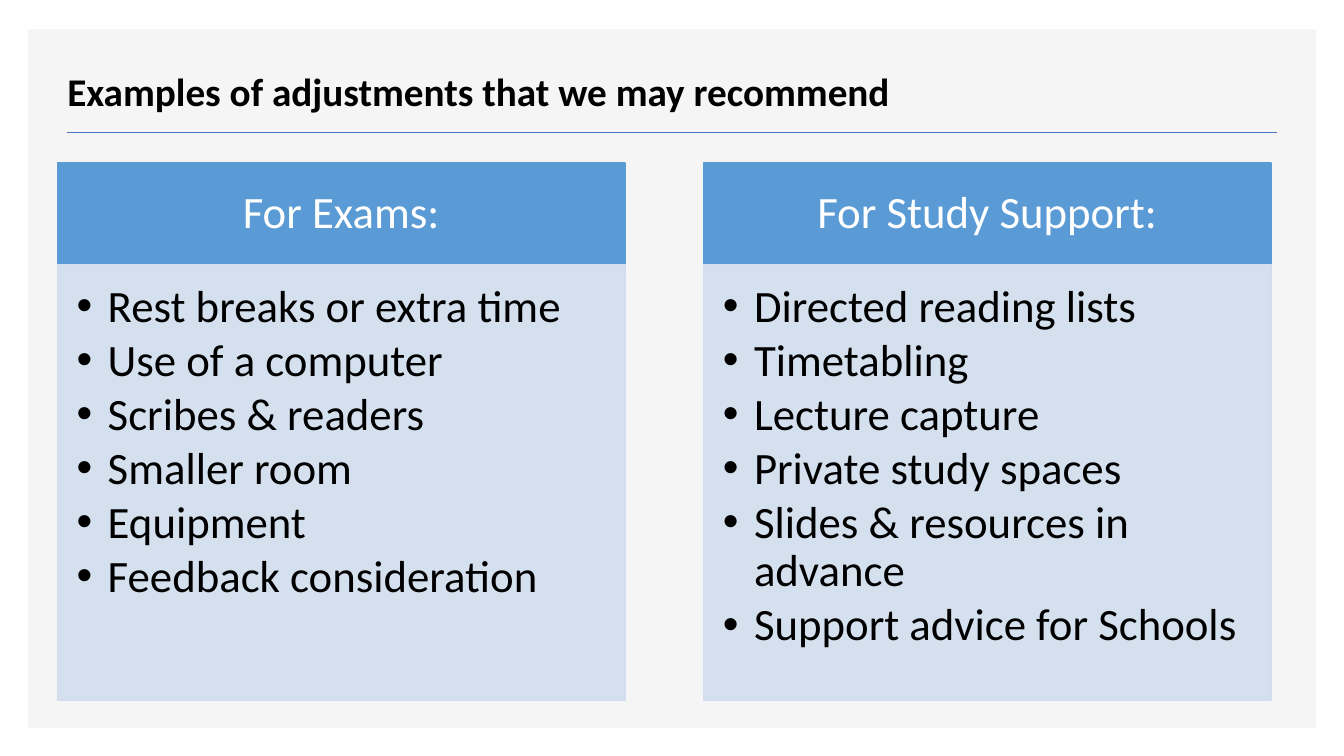
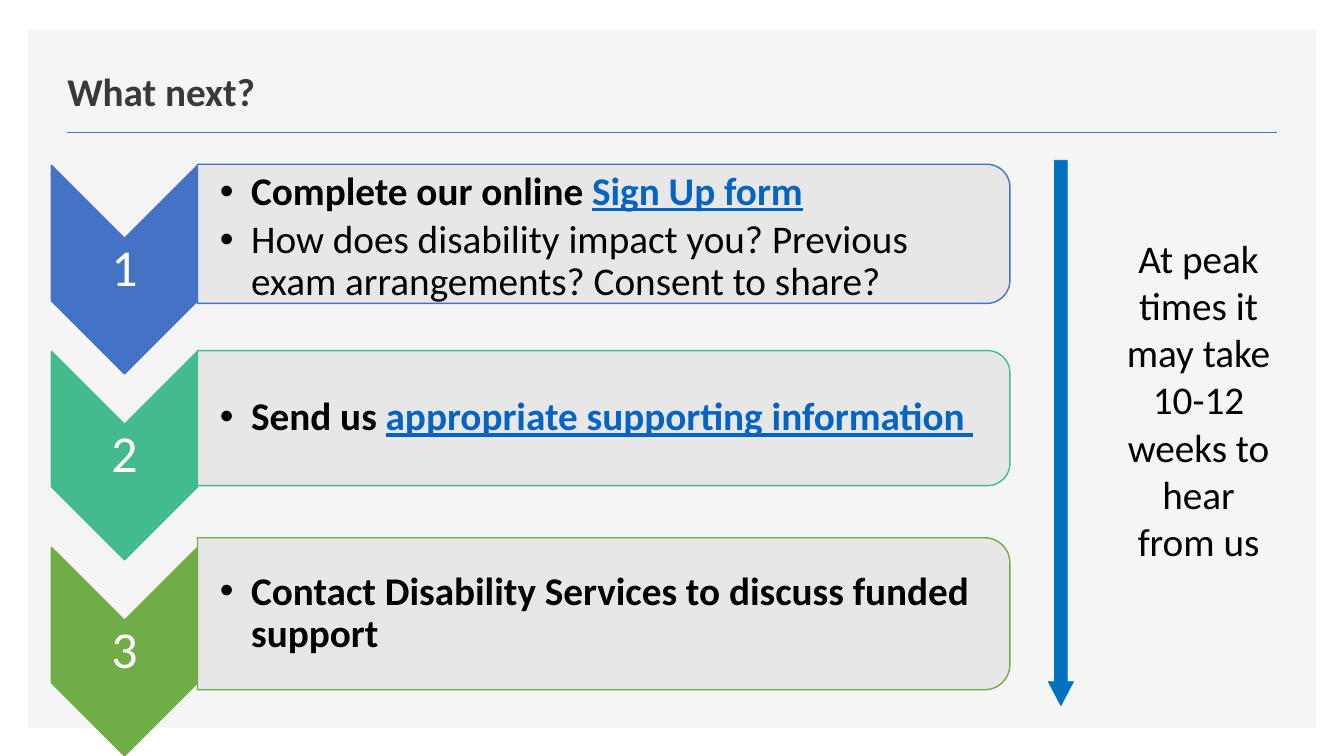
from lxml import etree
from pptx import Presentation
from pptx.dml.color import RGBColor
from pptx.enum.shapes import MSO_CONNECTOR, MSO_SHAPE
from pptx.enum.text import MSO_ANCHOR, PP_ALIGN
from pptx.oxml.ns import qn
from pptx.util import Pt

RECT, CHEVRON = MSO_SHAPE.RECTANGLE, MSO_SHAPE.CHEVRON
ROUND_TOP, DOWN_ARROW = MSO_SHAPE.ROUND_2_SAME_RECTANGLE, MSO_SHAPE.DOWN_ARROW
STRAIGHT = MSO_CONNECTOR.STRAIGHT
TOP, MIDDLE, BOTTOM = MSO_ANCHOR.TOP, MSO_ANCHOR.MIDDLE, MSO_ANCHOR.BOTTOM
LEFT, CENTER = PP_ALIGN.LEFT, PP_ALIGN.CENTER

BLACK = RGBColor(0x00, 0x00, 0x00)
WHITE = RGBColor(0xFF, 0xFF, 0xFF)
CHARCOAL = RGBColor(0x3B, 0x38, 0x38)
PANEL_GREY = RGBColor(0xF5, 0xF5, 0xF5)
BAR_GREY = RGBColor(0xE7, 0xE6, 0xE6)
BLUE = RGBColor(0x44, 0x72, 0xC4)
HEADING_BLUE = RGBColor(0x5B, 0x9B, 0xD5)
PALE_BLUE = RGBColor(0xD2, 0xDE, 0xEF)
TEAL = RGBColor(0x43, 0xBB, 0x8D)
GREEN = RGBColor(0x70, 0xAD, 0x47)
ARROW_BLUE = RGBColor(0x00, 0x70, 0xC0)
LINK_BLUE = RGBColor(0x05, 0x63, 0xC1)

FONT = "Calibri"
BULLET_INDENT = 22.3
# Run styles: colour, bold, underline
PLAIN = (BLACK, False, False)
STRONG = (BLACK, True, False)
LINK = (LINK_BLUE, True, True)
ON_COLOUR = (WHITE, False, False)


def add_block(slide, preset, box, fill, line=None, line_width=1, opacity=100):
    """Add a preset shape; box is left, top, width, height in points."""
    block = slide.shapes.add_shape(preset, *map(Pt, box))
    block.shadow.inherit = False
    block.fill.solid()
    block.fill.fore_color.rgb = fill
    if opacity < 100:
        colour = block._element.spPr.find(qn("a:solidFill"))[0]
        etree.SubElement(colour, qn("a:alpha")).set("val", str(opacity * 1000))
    if line is None:
        block.line.fill.background()
    else:
        block.line.color.rgb = line
        block.line.width = Pt(line_width)
    return block


def write(shape, paragraphs, size, insets=(7.2, 3.6, 7.2, 3.6), anchor=MIDDLE,
          align=CENTER, line_spacing=0.9, bullets=False):
    """Fill a shape with paragraphs, each a list of (text, style) runs."""
    frame = shape.text_frame
    frame.word_wrap = True
    frame.vertical_anchor = anchor
    (frame.margin_left, frame.margin_top,
     frame.margin_right, frame.margin_bottom) = map(Pt, insets)
    for index, runs in enumerate(paragraphs):
        paragraph = frame.add_paragraph() if index else frame.paragraphs[0]
        paragraph.alignment = align
        paragraph.line_spacing = line_spacing
        for text, (colour, bold, underline) in runs:
            run = paragraph.add_run()
            run.text = text
            run.font.name = FONT
            run.font.size = Pt(size)
            run.font.color.rgb = colour
            run.font.bold = bold
            run.font.underline = underline
        if bullets:
            paragraph.space_after = Pt(4)
            properties = paragraph._p.get_or_add_pPr()
            properties.set("marL", str(Pt(BULLET_INDENT)))
            properties.set("indent", str(-Pt(BULLET_INDENT)))
            etree.SubElement(properties, qn("a:buFont")).set("typeface", "Arial")
            etree.SubElement(properties, qn("a:buChar")).set("char", "•")


deck = Presentation()
deck.slide_width, deck.slide_height = Pt(960), Pt(540)

# Shared frame: grey panel, title and rule
slides = []
for title, title_colour in (
    ("Examples of adjustments that we may recommend", BLACK),
    ("What next?", CHARCOAL),
):
    slide = deck.slides.add_slide(deck.slide_layouts[6])
    add_block(slide, RECT, (20, 21, 920, 499), PANEL_GREY)
    rule = slide.shapes.add_connector(STRAIGHT, Pt(47.6), Pt(94.5), Pt(912), Pt(94.5))
    rule.line.color.rgb = BLUE
    rule.line.width = Pt(0.5)
    etree.SubElement(rule._element.spPr, qn("a:effectLst"))
    heading = slide.shapes.add_textbox(Pt(41), Pt(35.5), Pt(867), Pt(50.5))
    write(heading, [[(title, (title_colour, True, False))]], 28,
          anchor=BOTTOM, align=LEFT)
    slides.append(slide)
adjustments, next_steps = slides

# Slide 1: two lists side by side
COLUMN_LEFT, COLUMN_WIDTH, COLUMN_PITCH = 41, 405.4, 461.6
HEADING_TOP, HEADING_HEIGHT, LIST_HEIGHT = 116.3, 72.7, 311.2
columns = (
    ("For Exams:", (
        "Rest breaks or extra time", "Use of a computer", "Scribes & readers",
        "Smaller room", "Equipment", "Feedback consideration")),
    ("For Study Support:", (
        "Directed reading lists", "Timetabling", "Lecture capture",
        "Private study spaces", "Slides & resources in advance",
        "Support advice for Schools")),
)
for index, (purpose, examples) in enumerate(columns):
    left = COLUMN_LEFT + index * COLUMN_PITCH
    header = add_block(adjustments, RECT,
                       (left, HEADING_TOP, COLUMN_WIDTH, HEADING_HEIGHT),
                       HEADING_BLUE, HEADING_BLUE)
    write(header, [[(purpose, ON_COLOUR)]], 32, insets=(18, 10, 18, 10))
    example_list = add_block(
        adjustments, RECT,
        (left, HEADING_TOP + HEADING_HEIGHT, COLUMN_WIDTH, LIST_HEIGHT),
        PALE_BLUE, PALE_BLUE, opacity=90)
    write(example_list, [[(example, PLAIN)] for example in examples], 32,
          insets=(13.7, 13.7, 18, 20), anchor=TOP, align=LEFT, bullets=True)

# Slide 2: numbered steps; chevrons and bars are preset shapes turned by 90°
CHEVRON_LEFT, CHEVRON_WIDTH, CHEVRON_HEIGHT = 36.7, 104.4, 149
BAR_LEFT, BAR_WIDTH = 141.1, 580.3
# Colour, chevron middle, bar middle, bar height, top inset, paragraphs
steps = (
    (BLUE, 192.6, 167, 99.4, 6, [
        [("Complete our online ", STRONG), ("Sign Up form", LINK)],
        [("How does disability impact you? Previous exam arrangements? "
          "Consent to share?", PLAIN)]]),
    (TEAL, 325.5, 298.7, 96.5, 0, [
        [("Send us ", STRONG), ("appropriate supporting information ", LINK)]]),
    (GREEN, 465.5, 438.4, 108.6, 0, [
        [("Contact Disability Services to discuss funded support", STRONG)]]),
)
for number, (colour, chevron_middle, bar_middle, bar_height, top_inset,
             instructions) in enumerate(steps, start=1):
    chevron_centre = CHEVRON_LEFT + CHEVRON_WIDTH / 2
    bar_centre = BAR_LEFT + BAR_WIDTH / 2
    chevron = add_block(
        next_steps, CHEVRON,
        (chevron_centre - CHEVRON_HEIGHT / 2, chevron_middle - CHEVRON_WIDTH / 2,
         CHEVRON_HEIGHT, CHEVRON_WIDTH), colour, colour)
    bar = add_block(
        next_steps, ROUND_TOP,
        (bar_centre - bar_height / 2, bar_middle - BAR_WIDTH / 2,
         bar_height, BAR_WIDTH), BAR_GREY, colour, opacity=90)
    chevron.rotation = bar.rotation = 90

    step_number = next_steps.shapes.add_textbox(
        Pt(CHEVRON_LEFT), Pt(chevron_middle - 22), Pt(CHEVRON_WIDTH), Pt(44))
    write(step_number, [[(str(number), ON_COLOUR)]], 37, insets=(2, 2, 2, 2))
    step_text = next_steps.shapes.add_textbox(
        Pt(BAR_LEFT), Pt(bar_middle - bar_height / 2), Pt(BAR_WIDTH - 5), Pt(bar_height))
    write(step_text, instructions, 28, insets=(16, top_inset, 1.4, 0),
          align=LEFT, bullets=True)

waiting_arrow = add_block(next_steps, DOWN_ARROW, (748.8, 114.5, 18, 389.5),
                          ARROW_BLUE, ARROW_BLUE, line_width=0.5)
waiting_arrow.adjustments[0] = 0.5
waiting_arrow.adjustments[1] = 0.95
waiting_note = next_steps.shapes.add_textbox(Pt(795.6), Pt(164), Pt(121), Pt(279))
write(waiting_note,
      [[("At peak times it may take 10-12 weeks to hear from us", PLAIN)]],
      28, anchor=TOP, line_spacing=1.0)

deck.save("out.pptx")
